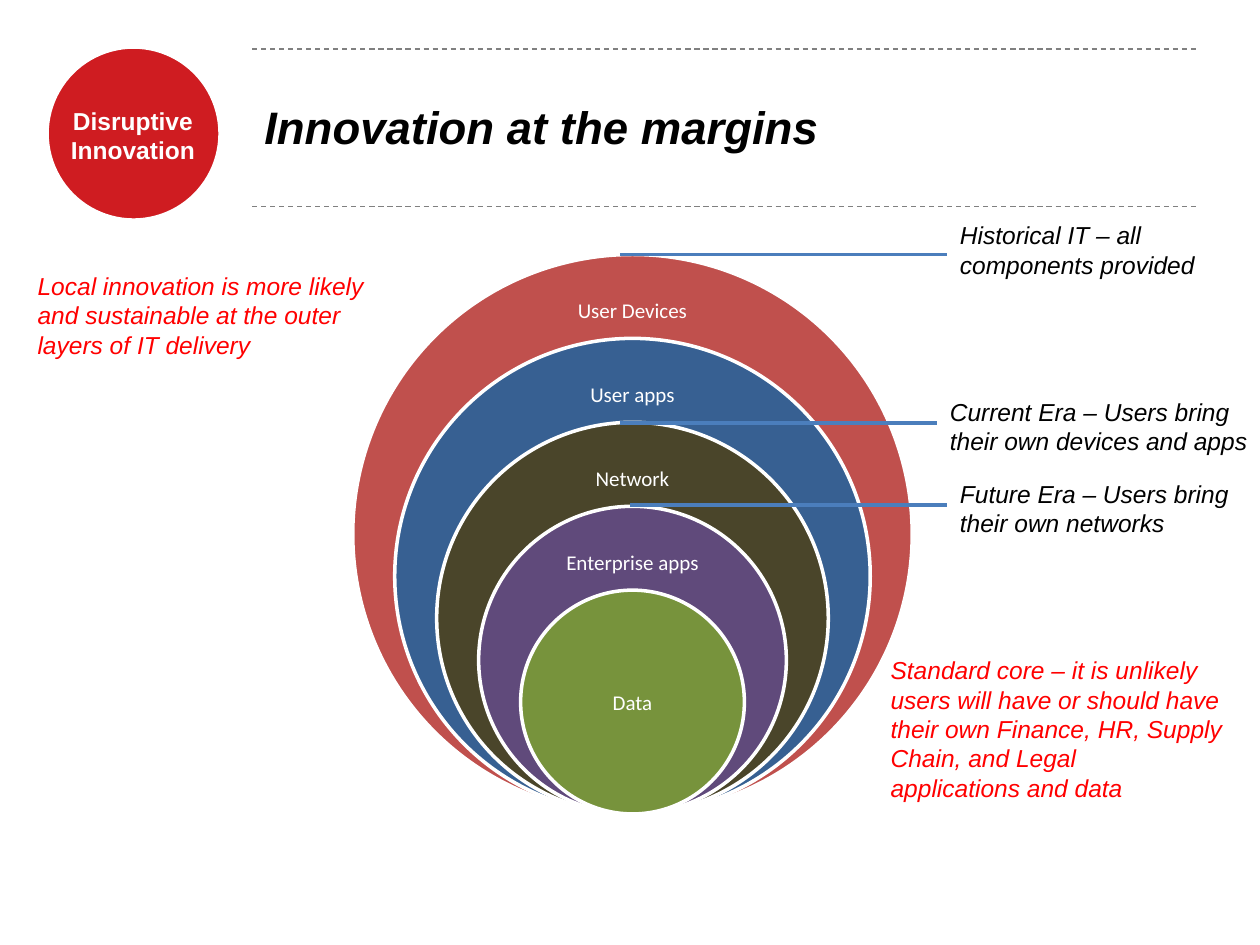
"""Build the slide on innovation at the margins of IT delivery."""
from lxml import etree
from pptx import Presentation, util as u
from pptx.dml.color import RGBColor
from pptx.enum import dml, shapes, text
from pptx.oxml import ns

hex_color = RGBColor.from_string
WHITE, BLACK, RED = "FFFFFF", "000000", "FF0000"
COLUMNS = 100

deck = Presentation()
deck.slide_width, deck.slide_height = u.Inches(10), u.Inches(7.5)
slide = deck.slides.add_slide(deck.slide_layouts[6])


def grid(*cells):
    """Turn square grid cells, 100 across the slide, into lengths."""
    return [u.Emu(round(n * deck.slide_width / COLUMNS)) for n in cells]


def write(box, lines, size, color, font="Arial", bold=False, italic=True,
          centred=False, wrap=True, middle=False, margins=(1, 0.5)):
    """Add a text box with one paragraph for each line."""
    frame = slide.shapes.add_textbox(*grid(*box)).text_frame
    frame.word_wrap = wrap
    frame.vertical_anchor = text.MSO_ANCHOR.MIDDLE if middle else text.MSO_ANCHOR.TOP
    frame.margin_left, frame.margin_top = frame.margin_right, frame.margin_bottom = grid(*margins)
    frame.text = "\n".join(lines)
    for paragraph in frame.paragraphs:
        paragraph.alignment = text.PP_ALIGN.CENTER if centred else text.PP_ALIGN.LEFT
        paragraph.font.name, paragraph.font.size = font, u.Pt(size)
        paragraph.font.bold, paragraph.font.italic = bold, italic
        paragraph.font.color.rgb = hex_color(color)


badge = (3.7, 3.7, 13.8, "CF1C21", 2.5, None, None)
discs = [badge]
layers = [("User Devices", "C0504D", 16.7), ("User apps", "376092", 16.3),
          ("Network", "4A452A", 16.1), ("Enterprise apps", "604A7B", 13.2),
          ("Data", "77933C", 12.6)]
middle_x, base, outermost, step = 50.2, 64.6, 44.4, 6.66
for depth, (layer, fill, label_width) in enumerate(layers):
    diameter = outermost - depth * step
    top = base - diameter
    core = depth == len(layers) - 1
    label_top, label_height = (diameter / 4, diameter / 2) if core else (2.2, 4.4)
    label_box = (middle_x - label_width / 2, top + label_top, label_width, label_height)
    discs.append((middle_x - diameter / 2, top, diameter, fill, 2, layer, label_box))

for left, top, diameter, fill, outline, layer, label_box in discs:
    disc = slide.shapes.add_shape(shapes.MSO_SHAPE.OVAL, *grid(left, top, diameter, diameter))
    disc.shadow.inherit = False
    disc.fill.solid()
    disc.fill.fore_color.rgb = hex_color(fill)
    disc.line.color.rgb = hex_color(WHITE)
    disc.line.width = u.Pt(outline)
    if layer:
        write(label_box, [layer], 12, WHITE, "Calibri", italic=False,
              centred=True, middle=True, margins=(0.9, 0.9))

write((4.3, 8.4, 12.5, 4.7), ["Disruptive", "Innovation"], 14, WHITE, bold=True,
      italic=False, centred=True, margins=(0, 0))
write((20, 3.8, 75, 12.5), ["Innovation at the margins"], 26, BLACK, bold=True, middle=True)

header_rules = [(20, 95, y, "808080", 0.75, dml.MSO_LINE.DASH) for y in (3.9, 16.4)]
leaders = [(start, end, y, "4B7EBC", 2.25, dml.MSO_LINE.SOLID)
           for start, end, y in ((49.2, 75.2, 20.2), (49.2, 74.4, 33.6), (50, 75.2, 40.1))]
for start, end, y, color, weight, dash in header_rules + leaders:
    rule = slide.shapes.add_connector(shapes.MSO_CONNECTOR.STRAIGHT, *grid(start, y, end, y))
    rule.line.color.rgb = hex_color(color)
    rule.line.width = u.Pt(weight)
    rule.line.dash_style = dash
    etree.SubElement(rule.element.spPr, ns.qn("a:effectLst"))

remarks = [
    ((75.2, 17, 21.3, 5.7), BLACK, ["Historical IT – all", "components provided"]),
    ((74.4, 31, 25.7, 5.7), BLACK, ["Current Era – Users bring", "their own devices and apps"]),
    ((75.2, 37.5, 24, 5.7), BLACK, ["Future Era – Users bring", "their own networks"]),
    ((69.7, 51.5, 29, 12.8), RED,
     ["Standard core – it is unlikely", "users will have or should have",
      "their own Finance, HR, Supply", "Chain, and Legal", "applications and data"]),
    ((2, 21, 28.6, 8.1), RED,
     ["Local innovation is more likely", "and sustainable at the outer", "layers of IT delivery"]),
]
for box, color, lines in remarks:
    write(box, lines, 14, color, wrap=False)

deck.save("out.pptx")
